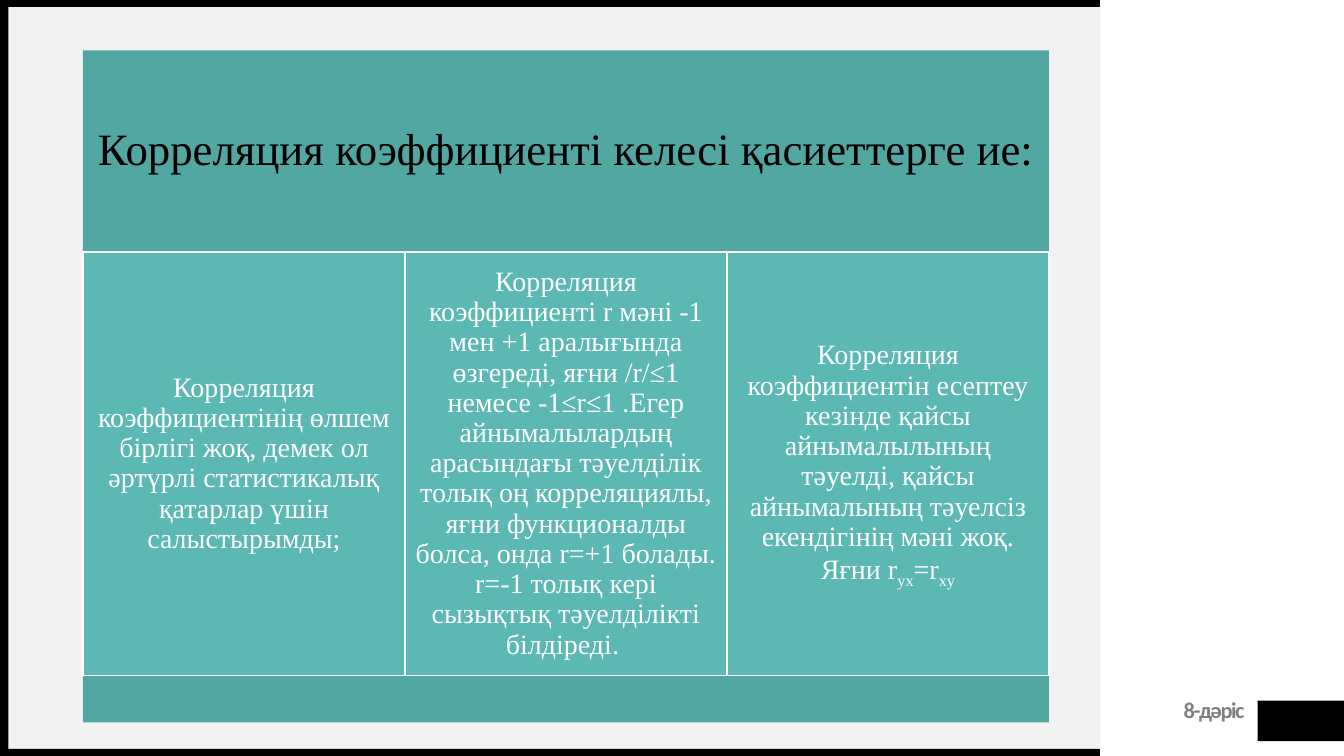
from pptx import Presentation
from pptx.util import Pt
from pptx.dml.color import RGBColor
from pptx.enum import shapes, text

SERIF = "Times New Roman"


def paint(fmt, hue):
    fmt.solid()
    fmt.fore_color.rgb = RGBColor.from_string(hue)


def block(x, y, w, h, hue):
    box = slide.shapes.add_shape(shapes.MSO_SHAPE.RECTANGLE, Pt(x), Pt(y), Pt(w), Pt(h))
    box.shadow.inherit = False
    paint(box.fill, hue)
    box.line.fill.background()
    return box


prs = Presentation()
prs.slide_width, prs.slide_height = Pt(960), Pt(540)
slide = prs.slides.add_slide(prs.slide_layouts[6])

# Grey panel, black frame and page marker
for x, y, w, h, hue in [
    (6, 5, 780, 530, "F2F2F2"),
    (898.3, 500.4, 61.7, 29, "000000"),
    (0, 535, 785.7, 5, "000000"),
    (0, 0, 785.7, 5, "000000"),
    (0, 0, 6, 540, "000000"),
]:
    block(x, y, w, h, hue)

# Lecture label
label = slide.shapes.add_textbox(Pt(758), Pt(499.7), Pt(131), Pt(18))
frame = label.text_frame
frame.word_wrap = True
frame.margin_left = frame.margin_right = frame.margin_bottom = 0
frame.margin_top = Pt(3)
para = frame.paragraphs[0]
para.alignment = text.PP_ALIGN.RIGHT
para.line_spacing = Pt(14)
run = para.add_run()
run.text = "8-дәріс"
run.font.name, run.font.size, run.font.bold = "Calibri", Pt(16), True
paint(run.font.fill, "808080")
run._r.get_or_add_rPr().set("spc", "-100")

# Heading, three columns and base strip: runs pair text with a subscript flag
left, top, wide = 59.3, 180, 690
col = wide / 3
head = block(left, 36, wide, top - 36, "53A7A2")
block(left, 482.4, wide, 33.6, "53A7A2")
parts = [(head, 32, "000000", 9.6, [("Корреляция коэффициенті келесі қасиеттерге ие:", False)])]

notes = [
    [("Корреляция коэффициентінің өлшем бірлігі жоқ, демек ол әртүрлі "
      "статистикалық қатарлар үшін салыстырымды;", False)],
    [("Корреляция коэффициенті r мәні -1 мен +1 аралығында өзгереді, яғни /r/≤1 "
      "немесе -1≤r≤1 .Егер айнымалылардың арасындағы тәуелділік толық оң "
      "корреляциялы, яғни функционалды болса, онда r=+1 болады. r=-1 толық кері "
      "сызықтық тәуелділікті білдіреді. ", False)],
    [("Корреляция коэффициентін есептеу кезінде қайсы айнымалылының тәуелді, қайсы "
      "айнымалының тәуелсіз екендігінің мәні жоқ. Яғни r", False),
     ("yx", True), ("=r", False), ("xy", True)],
]
for i, runs in enumerate(notes):
    cell = block(left + i * col, top, col, 302.4, "5CB8B3")
    paint(cell.line.fill, "FFFFFF")
    cell.line.width = Pt(1)
    parts.append((cell, 20, "FFFFFF", 6, runs))

# Text of the heading and columns
for box, size, hue, pad, runs in parts:
    frame = box.text_frame
    frame.word_wrap = True
    frame.vertical_anchor = text.MSO_ANCHOR.MIDDLE
    frame.margin_left = frame.margin_right = Pt(pad)
    frame.margin_top = frame.margin_bottom = Pt(pad)
    para = frame.paragraphs[0]
    para.alignment = text.PP_ALIGN.CENTER
    para.line_spacing = 0.9
    for words, sub in runs:
        run = para.add_run()
        run.text = words
        run.font.name, run.font.size = SERIF, Pt(size)
        paint(run.font.fill, hue)
        if sub:
            run._r.get_or_add_rPr().set("baseline", "-25000")

prs.save("out.pptx")
